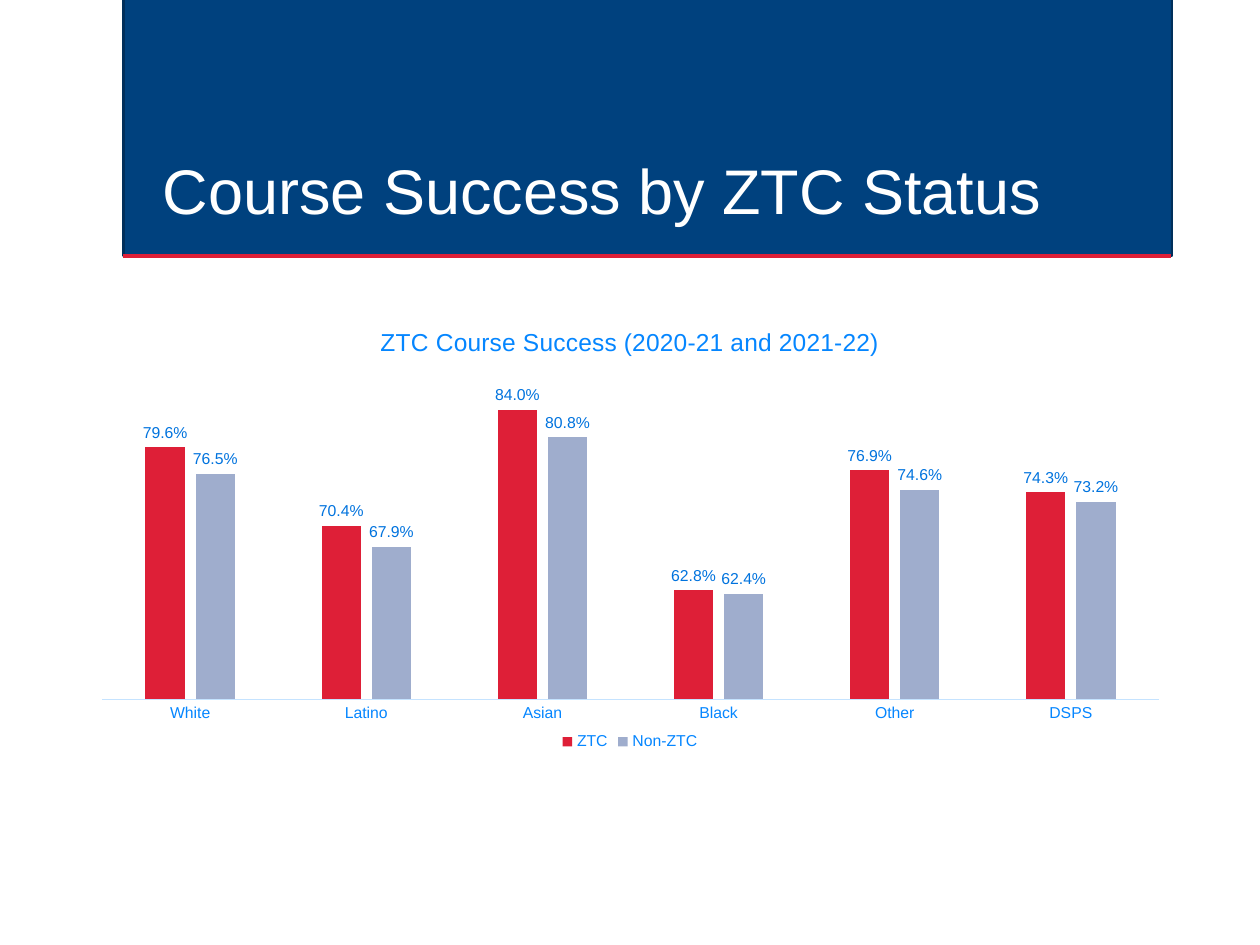
from dataclasses import dataclass

from lxml import etree
from pptx import Presentation
from pptx.chart.data import CategoryChartData
from pptx.dml.color import RGBColor
from pptx.enum.chart import XL_CHART_TYPE, XL_LABEL_POSITION, XL_LEGEND_POSITION, XL_TICK_MARK
from pptx.enum.shapes import MSO_CONNECTOR, MSO_SHAPE
from pptx.enum.text import MSO_ANCHOR, MSO_AUTO_SIZE, PP_ALIGN
from pptx.oxml import parse_xml
from pptx.oxml.ns import nsdecls, qn
from pptx.util import Inches, Pt

CLUSTERED = XL_CHART_TYPE.COLUMN_CLUSTERED
OUTSIDE_END = XL_LABEL_POSITION.OUTSIDE_END
BOTTOM_LEGEND = XL_LEGEND_POSITION.BOTTOM
NO_TICK = XL_TICK_MARK.NONE
RECTANGLE = MSO_SHAPE.RECTANGLE
STRAIGHT = MSO_CONNECTOR.STRAIGHT
ANCHOR_BOTTOM = MSO_ANCHOR.BOTTOM
NO_AUTOFIT = MSO_AUTO_SIZE.NONE
LEFT = PP_ALIGN.LEFT
TITLE_ONLY = 5


@dataclass(frozen=True)
class Theme:
    font: str = "Arial"
    navy: str = "00417E"
    navy_edge: str = "002F5B"
    red: str = "DE1F37"
    gray_blue: str = "9FADCD"
    chart_text: str = "0586FF"
    value_text: str = "0073DE"
    axis_line: str = "C5E3FF"
    white: str = "FFFFFF"
    title_size: float = 36
    chart_title_size: float = 14
    chart_size: float = 10
    label_size: float = 9


def apply_format(target, values):
    for name, value in values.items():
        setattr(target, name, value)


def rgb(color):
    return RGBColor.from_string(color)


class SlideBuilder:
    def __init__(self, slide, theme):
        self.slide = slide
        self.theme = theme

    def style_font(self, font, size, color):
        apply_format(font, {"name": self.theme.font, "size": Pt(size), "bold": False})
        font.color.rgb = rgb(color)

    def style_line(self, line, color, width):
        line.color.rgb = rgb(color)
        line.width = Pt(width)

    def band(self, left, top, width, height):
        band = self.slide.shapes.add_shape(
            RECTANGLE, Inches(left), Inches(top), Inches(width), Inches(height))
        band.shadow.inherit = False
        band.fill.solid()
        band.fill.fore_color.rgb = rgb(self.theme.navy)
        self.style_line(band.line, self.theme.navy_edge, 1.25)

    def rule(self, left, right, y):
        rule = self.slide.shapes.add_connector(
            STRAIGHT, Inches(left), Inches(y), Inches(right), Inches(y))
        self.style_line(rule.line, self.theme.red, 2.5)
        etree.SubElement(rule._element.spPr, qn("a:effectLst"))

    def title(self, text, left, top, width, height):
        """Fill the title placeholder and bring it in front of the band."""
        title = self.slide.shapes.title
        apply_format(title, {"left": Inches(left), "top": Inches(top),
                             "width": Inches(width), "height": Inches(height)})
        frame = title.text_frame
        apply_format(frame, {
            "text": text, "word_wrap": True, "auto_size": NO_AUTOFIT,
            "vertical_anchor": ANCHOR_BOTTOM,
            "margin_left": Inches(0.1), "margin_right": Inches(0.1),
            "margin_top": Inches(0.05), "margin_bottom": Inches(0.05)})
        paragraph = frame.paragraphs[0]
        apply_format(paragraph, {"alignment": LEFT, "line_spacing": 0.9})
        self.style_font(paragraph.runs[0].font, self.theme.title_size, self.theme.white)
        self.slide.shapes._spTree.append(title._element)

    def column_chart(self, heading, categories, series, box, plot_layout):
        """Draw clustered columns; series maps each name to (values, color)."""
        theme = self.theme
        data = CategoryChartData(number_format="0.0%")
        data.categories = categories
        for name, (values, _) in series.items():
            data.add_series(name, values)
        chart = self.slide.shapes.add_chart(
            CLUSTERED, *(Inches(length) for length in box), data).chart
        self.style_font(chart.font, theme.chart_size, theme.navy)

        heading_frame = chart.chart_title.text_frame
        heading_frame.text = heading
        self.style_font(heading_frame.paragraphs[0].runs[0].font,
                        theme.chart_title_size, theme.chart_text)
        chart.chart_title.include_in_layout = False

        chart.has_legend = True
        apply_format(chart.legend, {"position": BOTTOM_LEGEND, "include_in_layout": False})
        self.style_font(chart.legend.font, theme.label_size, theme.chart_text)

        category_axis = chart.category_axis
        apply_format(category_axis, {"major_tick_mark": NO_TICK, "minor_tick_mark": NO_TICK})
        self.style_font(category_axis.tick_labels.font, theme.label_size, theme.chart_text)
        self.style_line(category_axis.format.line, theme.axis_line, 0.75)
        apply_format(chart.value_axis, {
            "minimum_scale": 0.5, "maximum_scale": 0.9,
            "has_major_gridlines": False, "visible": False})

        plot = chart.plots[0]
        apply_format(plot, {"gap_width": 219, "overlap": -27, "vary_by_categories": False})
        for columns in plot.series:
            columns.format.fill.solid()
            columns.format.fill.fore_color.rgb = rgb(series[columns.name][1])
            labels = columns.data_labels
            apply_format(labels, {
                "show_value": True, "position": OUTSIDE_END,
                "number_format": "0.0%", "number_format_is_linked": False})
            self.style_font(labels.font, theme.label_size, theme.value_text)
        self.place_plot(chart, plot_layout)

    def place_plot(self, chart, fractions):
        """Fix the inner plot area as x, y, width, height shares of the chart."""
        plot_area = chart._chartSpace.chart.plotArea
        for automatic in plot_area.findall(qn("c:layout")):
            plot_area.remove(automatic)
        sizes = "".join(f'<c:{key} val="{value}"/>' for key, value in zip("xywh", fractions))
        plot_area.insert(0, parse_xml(
            f'<c:layout {nsdecls("c")}><c:manualLayout><c:layoutTarget val="inner"/>'
            f'<c:xMode val="edge"/><c:yMode val="edge"/>{sizes}'
            "</c:manualLayout></c:layout>"))


def main():
    presentation = Presentation()
    presentation.slide_width = Inches(10)
    presentation.slide_height = Inches(7.5)
    theme = Theme()
    slide = presentation.slides.add_slide(presentation.slide_layouts[TITLE_ONLY])
    builder = SlideBuilder(slide, theme)

    builder.band(0.98, -0.02, 8.32, 2.05)
    builder.rule(0.98, 9.29, 2.03)
    builder.title("Course Success by ZTC Status", 1.19, 0.88, 7.88, 0.98)

    success_rates = {
        "ZTC": ((0.796, 0.704, 0.84, 0.628, 0.769, 0.743), theme.red),
        "Non-ZTC": ((0.765, 0.679, 0.808, 0.624, 0.746, 0.732), theme.gray_blue),
    }
    builder.column_chart(
        "ZTC Course Success (2020-21 and 2021-22)",
        ("White", "Latino", "Asian", "Black", "Other", "DSPS"),
        success_rates, box=(0.69, 2.43, 8.62, 3.57),
        plot_layout=(0.014, 0.117, 0.973, 0.757))
    presentation.save("out.pptx")


if __name__ == "__main__":
    main()
